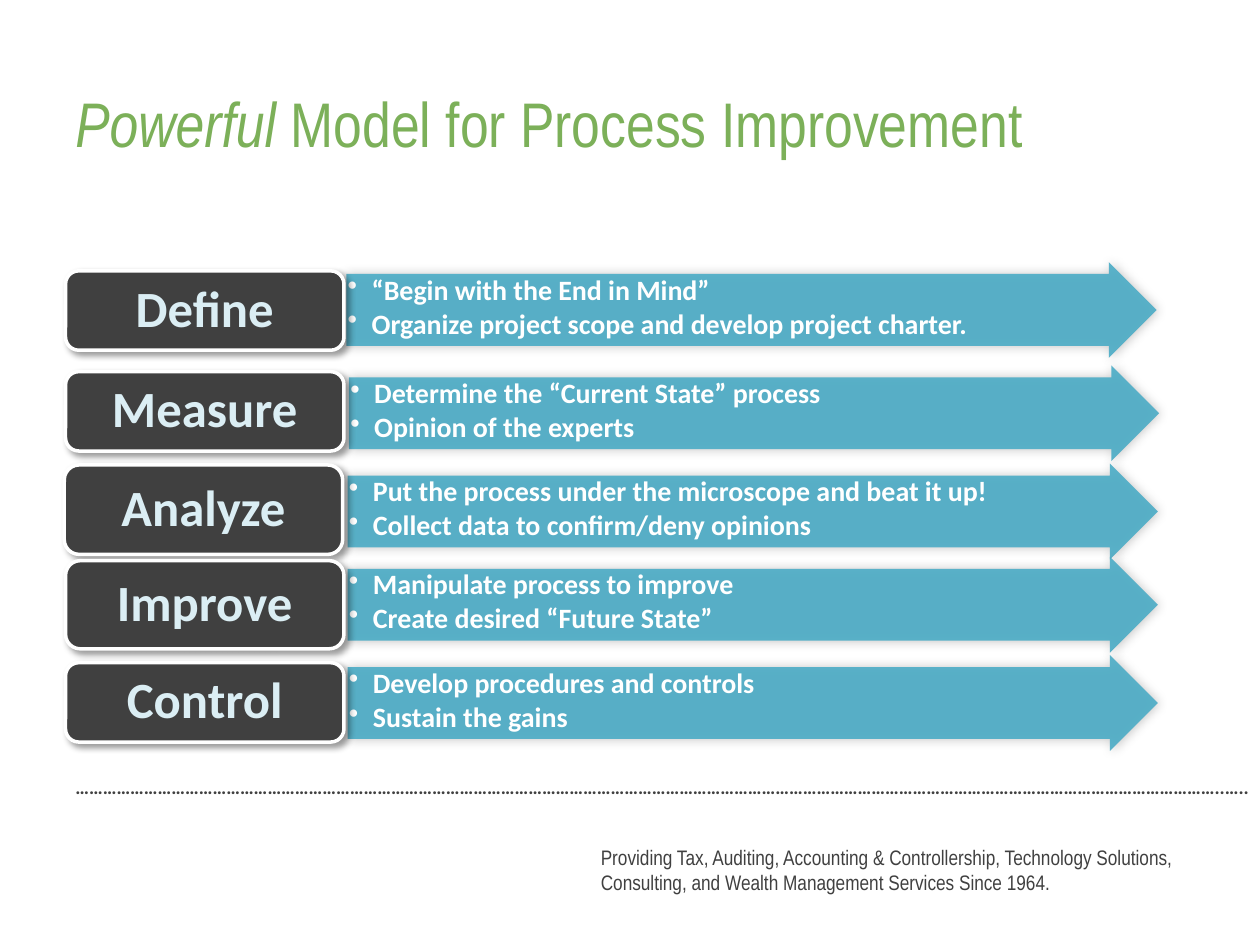
from lxml.etree import SubElement as Sub
from pptx import Presentation
from pptx.dml.color import RGBColor
from pptx.enum.shapes import MSO_SHAPE as Geo
from pptx.enum.text import MSO_ANCHOR as Anchor, PP_ALIGN as Align
from pptx.oxml.ns import qn
from pptx.util import Inches, Pt

TITLE = {"name": "Arial Narrow", "size": Pt(36), "color": "7CB059"}
LABEL = {"name": "Calibri", "size": Pt(29), "color": "DBEEF4", "bold": True}
POINT = {"name": "Calibri", "size": Pt(16), "color": "FFFFFF", "bold": True}
DOTS = {"name": "Calibri", "size": Pt(11), "color": "404040", "bold": True}
NOTE = {"name": "Arial Narrow", "size": Pt(12), "color": "404040"}

# step, points, arrow left and top, label left, top and height
STEPS = [
    ("Define", ["“Begin with the End in Mind”",
                "Organize project scope and develop project charter."],
     (2.75, 2.08), (0.52, 2.15, 0.63)),
    ("Measure", ["Determine the “Current State” process",
                 "Opinion of the experts"],
     (2.77, 2.9), (0.52, 2.95, 0.63)),
    ("Analyze", ["Put the process under the microscope and beat it up!",
                 "Collect data to confirm/deny opinions"],
     (2.76, 3.68), (0.51, 3.69, 0.71)),
    ("Improve", ["Manipulate process to improve",
                 "Create desired “Future State”"],
     (2.76, 4.42), (0.52, 4.45, 0.7)),
    ("Control", ["Develop procedures and controls", "Sustain the gains"],
     (2.76, 5.2), (0.52, 5.26, 0.63)),
]


def rgb(code):
    return RGBColor.from_string(code)


def style(font, form):
    for key, val in form.items():
        if key == "color":
            font.color.rgb = rgb(val)
        else:
            setattr(font, key, val)


def bullet(para, hang):
    props = para._p.get_or_add_pPr()
    props.set("marL", str(hang))
    props.set("indent", str(-hang))
    Sub(props, qn("a:buChar"), char="•")


def shade(shape, alpha, blur, dist, angle):
    """Add an outer black shadow; blur and dist in points, angle in degrees."""
    effects = Sub(shape._element.spPr, qn("a:effectLst"))
    outer = Sub(effects, qn("a:outerShdw"), blurRad=str(Pt(blur)),
                dist=str(Pt(dist)), dir=str(angle * 60000), algn="ctr",
                rotWithShape="0")
    ink = Sub(outer, qn("a:srgbClr"), val="000000")
    Sub(ink, qn("a:alpha"), val=str(alpha * 1000))


def block(slide, geo, box, color):
    shape = slide.shapes.add_shape(geo, *map(Inches, box))
    shape.fill.solid()
    shape.fill.fore_color.rgb = rgb(color)
    return shape


def text(slide, box, lines, form, pad=(0.1, 0.05), anchor=Anchor.MIDDLE,
         align=Align.LEFT, space=1.0, after=0, hang=0):
    """Each line is a list of (words, extra format) runs."""
    frame = slide.shapes.add_textbox(*map(Inches, box)).text_frame
    frame.word_wrap = True
    frame.vertical_anchor = anchor
    frame.margin_left = frame.margin_right = Inches(pad[0])
    frame.margin_top = frame.margin_bottom = Inches(pad[1])
    for i, line in enumerate(lines):
        para = frame.add_paragraph() if i else frame.paragraphs[0]
        para.alignment = align
        para.line_spacing = space
        para.space_after = Pt(after)
        if hang:
            bullet(para, Inches(hang))
        for words, extra in line:
            run = para.add_run()
            run.text = words
            style(run.font, {**form, **extra})


def arrow(slide, left, top, points):
    shape = block(slide, Geo.RIGHT_ARROW, (left, top, 6.43, 0.76), "4BACC6")
    shape.adjustments[0] = 0.75
    shape.line.fill.background()
    ink = shape._element.spPr.find(qn("a:solidFill"))[0]
    Sub(ink, qn("a:alpha"), val="90000")
    shade(shape, 24, 6, 0, 320)
    text(slide, (left, top + 0.1, 6.15, 0.57), [[(p, {})] for p in points],
         POINT, pad=(0.01, 0.01), anchor=Anchor.TOP, space=0.9, after=2.2,
         hang=0.19)


def label(slide, left, top, high, name):
    shape = block(slide, Geo.ROUNDED_RECTANGLE, (left, top, 2.21, high),
                  "404040")
    shape.line.color.rgb = rgb("FFFFFF")
    shape.line.width = Pt(2)
    shade(shape, 40, 4, 3, 45)
    text(slide, (left + 0.03, top + 0.03, 2.15, high - 0.06), [[(name, {})]],
         LABEL, pad=(0.12, 0.06), align=Align.CENTER, space=0.9)


def footer(slide, left, top):
    dots = "……………………………………………………………………………………………………………………………………………………………………………………………………………………………..….."
    note = ("Providing Tax, Auditing, Accounting & Controllership, Technology "
            "Solutions, Consulting, and Wealth Management Services Since 1964.")
    text(slide, (left, top, 9.67, 0.29), [[(dots, {})]], DOTS,
         anchor=Anchor.TOP)
    text(slide, (left + 4.17, top + 0.43, 5.17, 0.74), [[(note, {})]], NOTE)


def main():
    deck = Presentation()
    deck.slide_width, deck.slide_height = Inches(10), Inches(7.5)
    slide = deck.slides.add_slide(deck.slide_layouts[6])
    footer(slide, 0.5, 6.1)
    for name, points, place, tag in STEPS:
        arrow(slide, *place, points)
        label(slide, *tag, name)
    text(slide, (0.5, 0.3, 8.67, 1.45),
         [[("Powerful", {"italic": True}),
           (" Model for Process Improvement", {})]], TITLE, space=0.8)
    deck.save("out.pptx")


if __name__ == "__main__":
    main()
